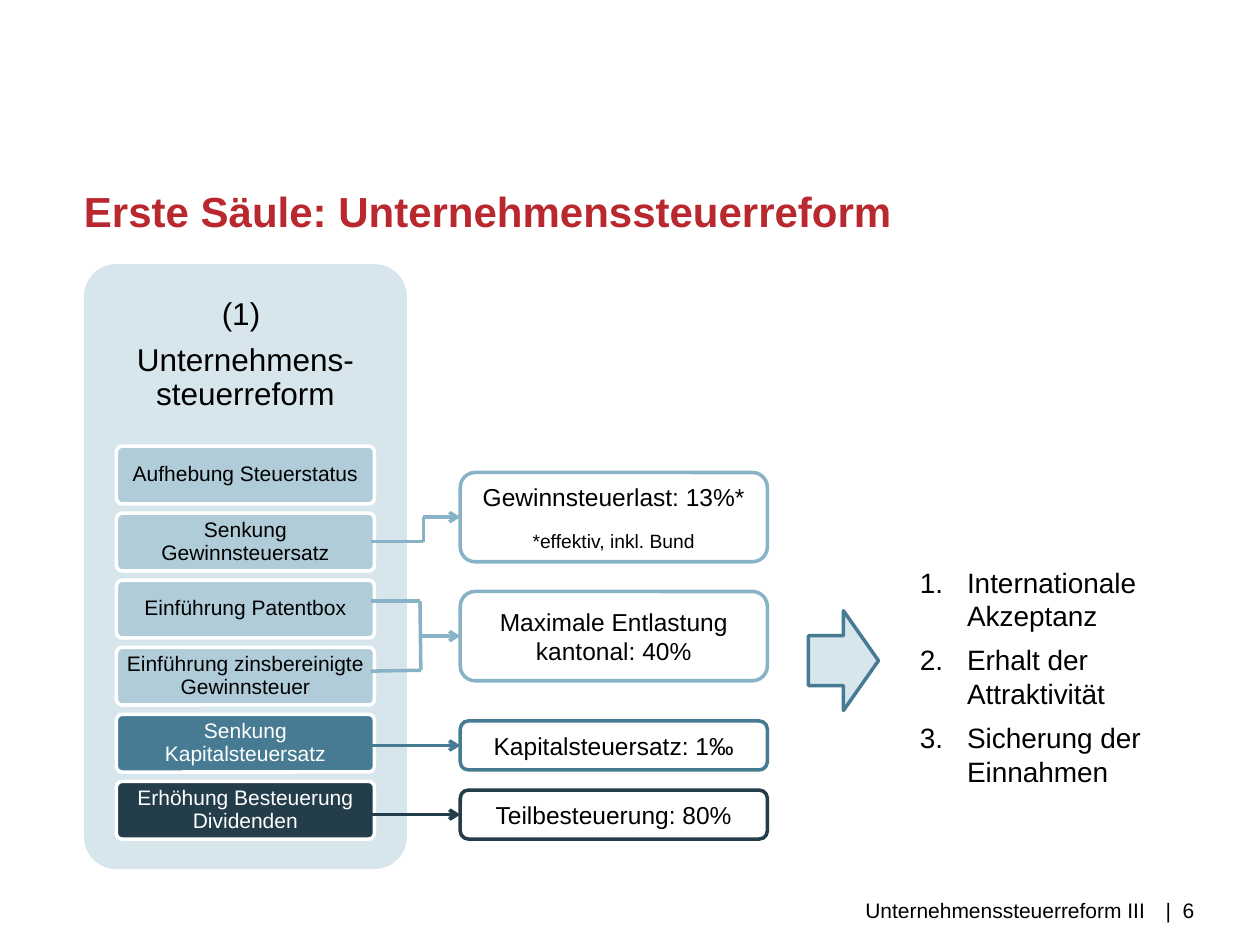
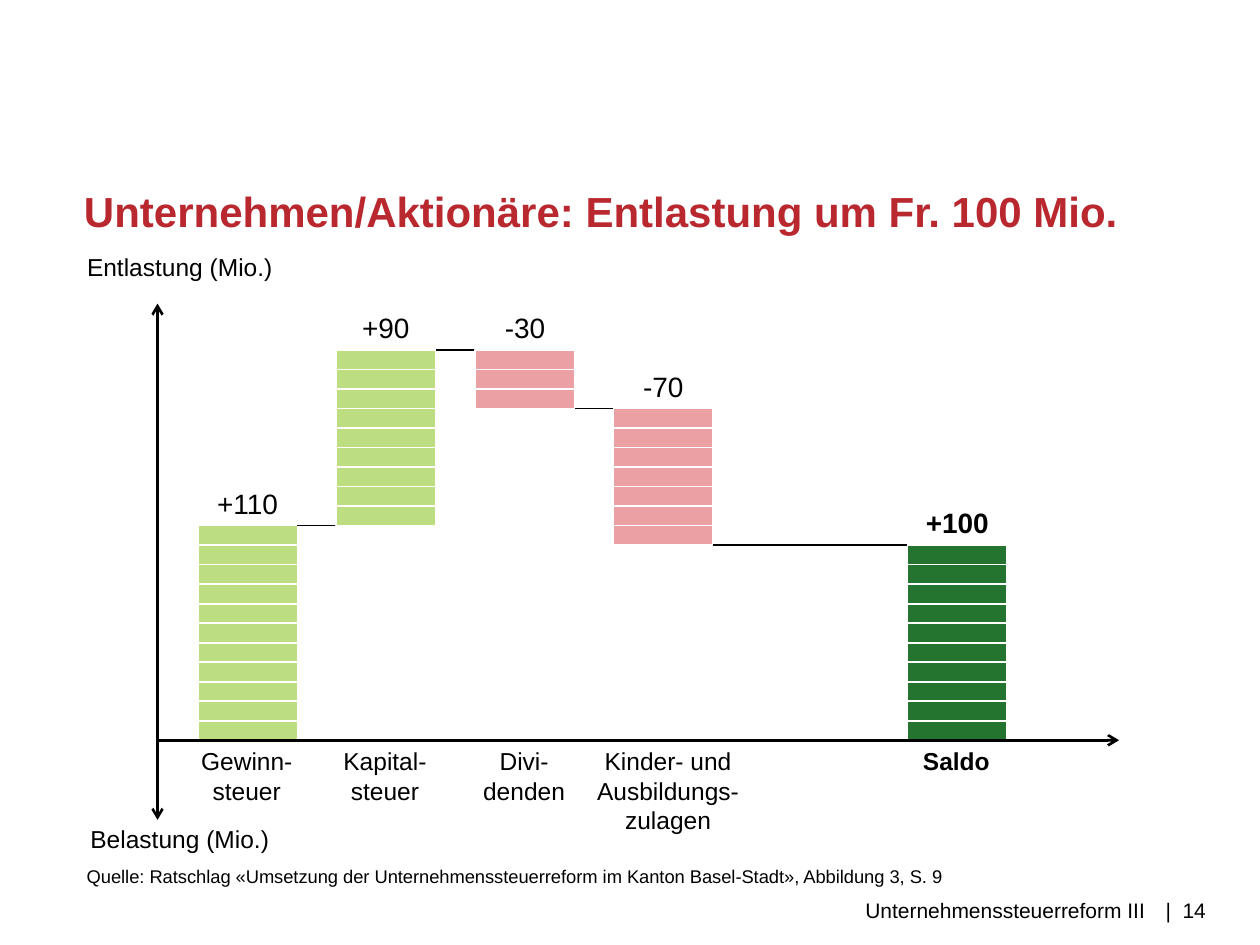
"""Builds two slides on the corporate tax reform."""
from dataclasses import dataclass

from lxml import etree
from pptx import Presentation
from pptx.dml.color import RGBColor
from pptx.enum.shapes import MSO_CONNECTOR, MSO_SHAPE
from pptx.enum.text import MSO_ANCHOR, MSO_AUTO_SIZE, PP_ALIGN
from pptx.oxml.ns import qn
from pptx.util import Pt

LEFT, CENTER, RIGHT = PP_ALIGN.LEFT, PP_ALIGN.CENTER, PP_ALIGN.RIGHT
TOP, MIDDLE = MSO_ANCHOR.TOP, MSO_ANCHOR.MIDDLE
NO_FIT = MSO_AUTO_SIZE.NONE
STRAIGHT = MSO_CONNECTOR.STRAIGHT
RECT, ROUND = MSO_SHAPE.RECTANGLE, MSO_SHAPE.ROUNDED_RECTANGLE
ARROW = MSO_SHAPE.RIGHT_ARROW


@dataclass(frozen=True)
class Theme:
    """Font, colours and type sizes of the deck."""
    font: str = "Arial"
    red: str = "B9282E"
    black: str = "000000"
    white: str = "FFFFFF"
    pale: str = "D7E6EC"
    light: str = "B0CCD9"
    sky: str = "88B3C6"
    steel: str = "467B93"
    navy: str = "233D4A"
    lime: str = "BCDD80"
    rose: str = "EBA1A4"
    green: str = "24732E"
    title: float = 24
    head: float = 18
    large: float = 16
    body: float = 14
    small: float = 12
    note: float = 11
    source: float = 10.5


THEME = Theme()
FOOTER = "Unternehmenssteuerreform III"


def assign(target, values):
    """Set each value of a dict as an attribute of the target."""
    for key, value in values.items():
        setattr(target, key, value)


def inset(side, top=None):
    """Return the frame margins for the sides and for top and bottom."""
    top = side if top is None else top
    return {"margin_left": Pt(side), "margin_right": Pt(side),
            "margin_top": Pt(top), "margin_bottom": Pt(top)}


def write(para, text, size, color=THEME.black, bold=False, **layout):
    """Write one formatted run into a paragraph."""
    assign(para, layout)
    run = para.add_run()
    run.text = text
    assign(run.font, {"name": THEME.font, "size": Pt(size), "bold": bold})
    run.font.color.rgb = RGBColor.from_string(color)


def add_text(slide, box, lines, size, frame=None, **style):
    """Add a wrapping text box with one paragraph for each line."""
    body = slide.shapes.add_textbox(*map(Pt, box)).text_frame
    assign(body, {"word_wrap": True, **(frame or {})})
    for index, line in enumerate(lines):
        para = body.add_paragraph() if index else body.paragraphs[0]
        write(para, line, size, **style)
    return body


def add_form(slide, kind, box, fill=None, edge=None, width=2, adjust=None):
    """Add a preset shape with plain fill and edge."""
    form = slide.shapes.add_shape(kind, *map(Pt, box))
    form.shadow.inherit = False
    if fill:
        form.fill.solid()
        form.fill.fore_color.rgb = RGBColor.from_string(fill)
    else:
        form.fill.background()
    if edge:
        form.line.color.rgb = RGBColor.from_string(edge)
        form.line.width = Pt(width)
    else:
        form.line.fill.background()
    if adjust is not None:
        form.adjustments[0] = adjust
    assign(form.text_frame, {"word_wrap": True, "vertical_anchor": MIDDLE})
    return form


def add_path(slide, points, color, width=2, tip=True):
    """Join points with straight lines and put a tip on the last."""
    for start, end in zip(points, points[1:]):
        line = slide.shapes.add_connector(
            STRAIGHT, *map(Pt, (*start, *end)))
        line.line.color.rgb = RGBColor.from_string(color)
        line.line.width = Pt(width)
        etree.SubElement(line.element.spPr, qn("a:effectLst"))
    if tip:
        etree.SubElement(line.line._get_or_add_ln(), qn("a:tailEnd"),
                         type="arrow")


def add_slide(deck, title, page):
    """Add a slide with title and footer."""
    slide = deck.slides.add_slide(deck.slide_layouts[5])
    head = slide.shapes.title
    assign(head, dict(zip(("left", "top", "width", "height"),
                          map(Pt, (48, 106, 641, 29)))))
    assign(head.text_frame, {"vertical_anchor": MIDDLE, "word_wrap": True,
                             "auto_size": NO_FIT, **inset(0)})
    write(head.text_frame.paragraphs[0], title, THEME.title, THEME.red, True,
          alignment=LEFT)
    for left, width, text, align in ((215, 439.5, FOOTER, RIGHT),
                                     (666, 54, f"|  {page}", LEFT)):
        add_text(slide, (left, 511, width, 29), [text], THEME.small,
                 inset(0, 2), alignment=align)
    return slide


def add_panel(slide):
    """Add the pillar panel with its measures."""
    add_form(slide, ROUND, (48, 151, 184.5, 345.6), THEME.pale, adjust=0.1)
    add_text(slide, (48, 151, 184.5, 104),
             ["(1) ", "Unternehmens-steuerreform"], THEME.head,
             {"vertical_anchor": MIDDLE, **inset(5)},
             alignment=CENTER, line_spacing=0.9, space_after=Pt(6.3))
    steps = (
        ("Aufhebung Steuerstatus", THEME.light, THEME.black),
        ("Senkung Gewinnsteuersatz", THEME.light, THEME.black),
        ("Einführung Patentbox", THEME.light, THEME.black),
        ("Einführung zinsbereinigte Gewinnsteuer", THEME.light, THEME.black),
        ("Senkung Kapitalsteuersatz", THEME.steel, THEME.white),
        ("Erhöhung Besteuerung Dividenden", THEME.navy, THEME.white),
    )
    for row, (text, fill, ink) in enumerate(steps):
        form = add_form(slide, ROUND, (66.5, 255 + 38.3 * row, 147.5, 33),
                        fill, THEME.white, adjust=0.1)
        assign(form.text_frame, inset(2))
        write(form.text_frame.paragraphs[0], text, THEME.small, ink,
              alignment=CENTER, line_spacing=0.9, space_after=Pt(4.2))


def add_goals(slide):
    """Add the results of the measures and the lines to them."""
    goals = (
        (270, 51, "Gewinnsteuerlast: 13%*", THEME.sky),
        (338, 51, "Maximale Entlastung kantonal: 40%", THEME.sky),
        (412, 28, "Kapitalsteuersatz: 1‰", THEME.steel),
        (451.5, 28, "Teilbesteuerung: 80%", THEME.navy),
    )
    frames = []
    for top, height, text, color in goals:
        form = add_form(slide, ROUND, (263, top, 175.5, height), edge=color)
        write(form.text_frame.paragraphs[0], text, THEME.body,
              alignment=CENTER)
        frames.append(form.text_frame)
    write(frames[0].add_paragraph(), "*effektiv, inkl. Bund", THEME.note,
          alignment=CENTER, space_before=Pt(10))

    add_path(slide, [(212, 309.5), (242, 309.5), (242, 295.5), (263, 295.5)],
             THEME.sky)
    add_path(slide, [(212, 343.5), (240, 343.5), (240.5, 383), (212, 383.5)],
             THEME.sky, tip=False)
    add_path(slide, [(240.5, 363.5), (263, 363.5)], THEME.sky)
    add_path(slide, [(193, 426), (263, 426)], THEME.steel)
    add_path(slide, [(181.5, 465.5), (263, 465.5)], THEME.navy)


def add_list(slide, box, lines):
    """Add a numbered list."""
    body = add_text(slide, box, lines, THEME.large, space_after=Pt(6))
    for para in body.paragraphs:
        props = para._p.get_or_add_pPr()
        props.set("marL", str(Pt(27)))
        props.set("indent", str(-Pt(27)))
        etree.SubElement(props, qn("a:buFont"), typeface=THEME.font)
        etree.SubElement(props, qn("a:buAutoNum"), type="arabicPeriod")


def add_bars(slide):
    """Add the stacked steps of the balance with labels and links."""
    base, unit, width = 423, 11.15, 57
    bars = (
        ("Gewinn-steuer", 110, 113, 101.5, 79, THEME.lime),
        ("Kapital-steuer", 90, 192, 180.5, 79, THEME.lime),
        ("Divi-denden", -30, 271.5, 260, 79, THEME.rose),
        ("Kinder- und Ausbildungs-zulagen", -70, 350.5, 328.5, 106.5,
         THEME.rose),
    )
    total = sum(bar[1] for bar in bars)
    bars += (("Saldo", total, 518.5, 507, 79, THEME.green),)
    level = 0
    for index, (name, change, left, edge, span, color) in enumerate(bars):
        last = index == len(bars) - 1
        start = 0 if last else level
        level = start + change
        peak = base - max(start, level) / 10 * unit
        for cell in range(abs(change) // 10):
            add_form(slide, RECT, (left, peak + cell * unit, width, unit),
                     color, THEME.white, 1)
        add_text(slide, (left, peak - 26, width, 26.5), [f"{change:+d}"],
                 THEME.large, alignment=CENTER, bold=last)
        add_text(slide, (edge, base, span, 41), [name], THEME.body,
                 alignment=CENTER, bold=last)
        if not last:
            high = base - level / 10 * unit
            add_path(slide, [(bars[index + 1][2], high),
                             (left + width, high)],
                     THEME.black, 0.75, False)


def add_axes(slide):
    """Add the axes and their names."""
    for end in ((90, 173.5), (90, 468.5), (639.5, 423)):
        add_path(slide, [(90, 423), end], THEME.black, 1.5)
    for top, text in ((140.5, "Entlastung (Mio.) "),
                      (467.5, "Belastung (Mio.) ")):
        add_text(slide, (42.5, top, 124.5, 24), [text], THEME.body,
                 alignment=CENTER)


def main():
    """Build and save the deck."""
    deck = Presentation()
    assign(deck, {"slide_width": Pt(720), "slide_height": Pt(540)})

    slide = add_slide(deck, "Erste Säule: Unternehmenssteuerreform", 6)
    add_panel(slide)
    add_goals(slide)
    add_form(slide, ARROW, (462, 349, 40, 57), THEME.pale, THEME.steel)
    add_list(slide, (518.5, 319.5, 164, 137),
             ["Internationale Akzeptanz", "Erhalt der Attraktivität",
              "Sicherung der Einnahmen"])

    slide = add_slide(
        deck, "Unternehmen/Aktionäre: Entlastung um Fr. 100 Mio.", 14)
    add_bars(slide)
    add_axes(slide)
    add_text(slide, (42.5, 491, 607, 20),
             ["Quelle: Ratschlag «Umsetzung der Unternehmenssteuerreform im "
              "Kanton Basel-Stadt», Abbildung 3, S. 9"], THEME.source)

    deck.save("out.pptx")


if __name__ == "__main__":
    main()
